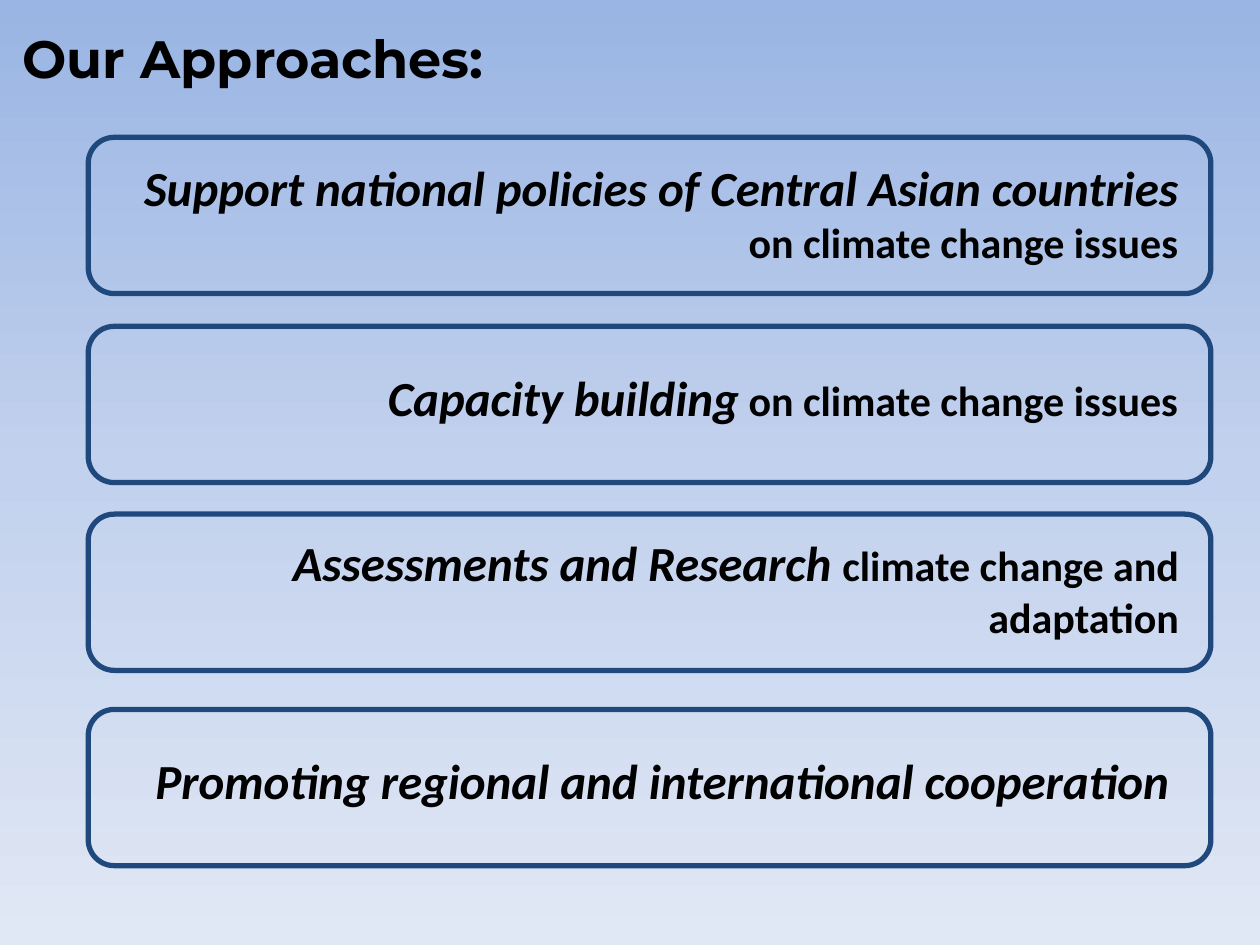
from copy import deepcopy
from dataclasses import dataclass

from pptx import Presentation
from pptx.dml.color import RGBColor
from pptx.enum import shapes, text
from pptx.oxml.ns import qn
from pptx.util import Pt


@dataclass(frozen=True)
class Theme:
    ink: str = "000000"
    edge: str = "1F497D"
    sky: tuple = ((0, "9AB5E4"), (0.5, "C2D1ED"), (1, "E1E8F5"))
    head: int = 30
    lead: int = 28
    body: int = 24
    line: int = 3


def write(para, words, size, font="Calibri", color="000000", bold=True, slant=False):
    run = para.add_run()
    run.text = words
    run.font.size = Pt(size)
    run.font.name = font
    run.font.bold = bold
    run.font.italic = slant
    run.font.color.rgb = RGBColor.from_string(color)


class Page:
    def __init__(self, slide, theme):
        self.slide = slide
        self.theme = theme

    def back(self):
        fill = self.slide.background.fill
        fill.gradient()
        fill.gradient_angle = 270
        stops = self.slide.element.find(".//" + qn("a:gsLst"))
        stops.append(deepcopy(stops[-1]))
        for stop, (place, color) in zip(fill.gradient_stops, self.theme.sky):
            stop.position = place
            stop.color.rgb = RGBColor.from_string(color)

    def frame(self, left, top, width, height):
        kind = shapes.MSO_SHAPE.FLOWCHART_ALTERNATE_PROCESS
        box = self.slide.shapes.add_shape(kind, Pt(left), Pt(top), Pt(width), Pt(height))
        box.shadow.inherit = False
        box.fill.background()
        box.line.color.rgb = RGBColor.from_string(self.theme.edge)
        box.line.width = Pt(self.theme.line)

    def label(self, left, top, width, height, align):
        box = self.slide.shapes.add_textbox(Pt(left), Pt(top), Pt(width), Pt(height))
        box.text_frame.word_wrap = True
        para = box.text_frame.paragraphs[0]
        para.alignment = align
        return para

    def title(self, words):
        para = self.label(5.8, 11.5, 697.7, 67.7, text.PP_ALIGN.LEFT)
        write(para, words, self.theme.head, font="Montserrat", color=self.theme.ink)

    def point(self, left, top, right, height, lead, rest):
        para = self.label(left, top, right - left, height, text.PP_ALIGN.RIGHT)
        write(para, lead, self.theme.lead, color=self.theme.ink, slant=True)
        if rest:
            write(para, rest, self.theme.body, color=self.theme.ink)


POINTS = [
    (78.5, 56.2, 86.4, 680.4, 70.6,
     "Support national policies of Central Asian countries ", "on climate change issues"),
    (186.5, 63.4, 206.6, 680.4, 41,
     "Capacity building", " on climate change issues"),
    (293.8, 103, 301, 680.8, 70.6,
     "Assessments and Research ", "climate change and adaptation"),
    (405.4, 74.9, 425.5, 675.4, 41,
     "Promoting regional and international cooperation", ""),
]


def main():
    deck = Presentation()
    deck.slide_width, deck.slide_height = Pt(720), Pt(540)
    page = Page(deck.slides.add_slide(deck.slide_layouts[6]), Theme())
    page.back()
    page.title("Our Approaches:")
    for top, *point in POINTS:
        page.frame(50.4, top, 641.5, 89.3)
        page.point(*point)
    deck.save("out.pptx")


if __name__ == "__main__":
    main()
